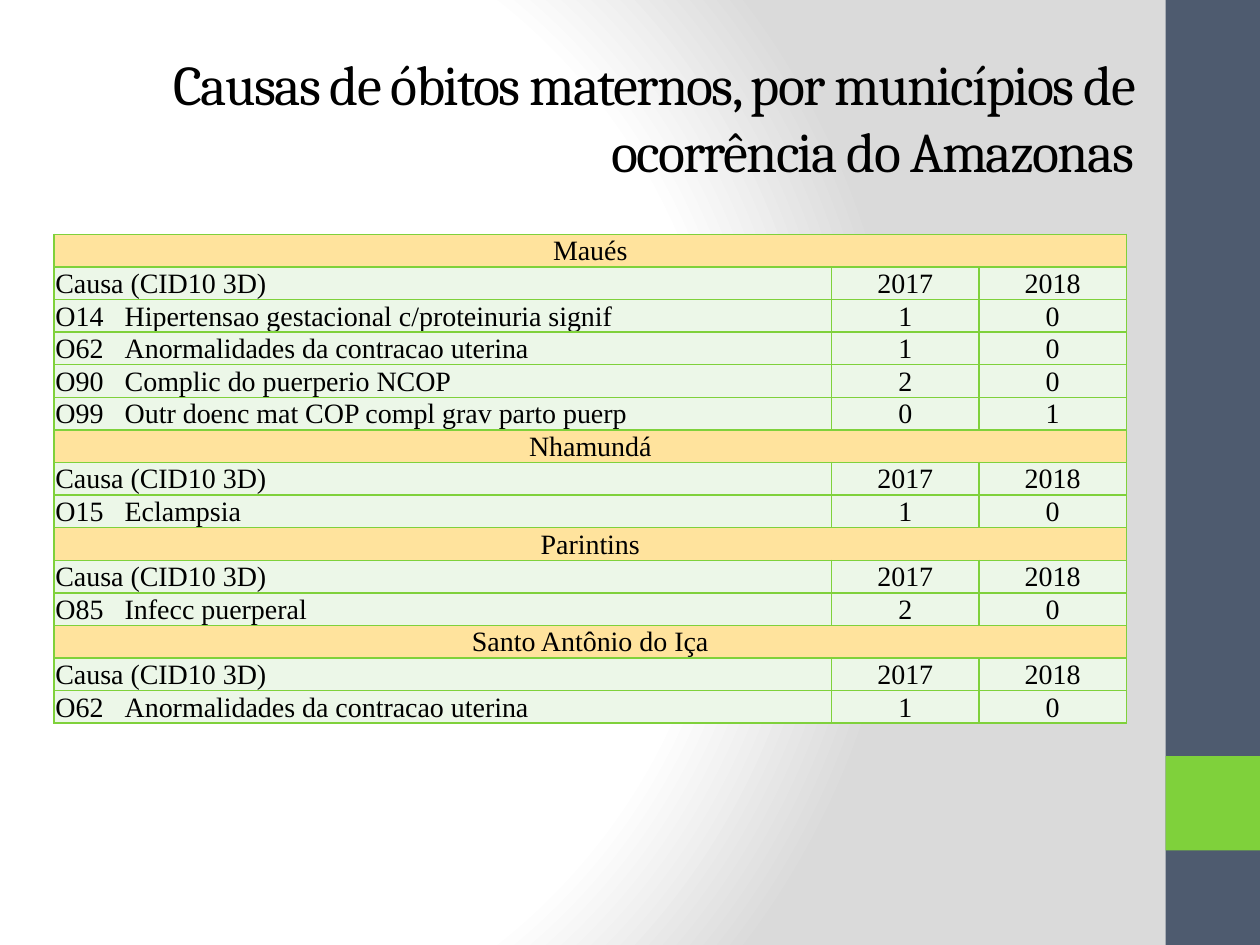
from dataclasses import dataclass

from lxml import etree
from pptx import Presentation, util as u
from pptx.dml.color import RGBColor
from pptx.enum import shapes, text
from pptx.oxml import parse_xml
from pptx.oxml.ns import nsdecls, qn


@dataclass(frozen=True)
class Theme:
    ink: str = "000000"
    slate: str = "4E5B6F"
    green: str = "7FD13B"
    heading: str = "FFE39D"
    body: str = "ECF7E8"
    white: str = "FFFFFF"
    grey: str = "DADADA"
    title_font: str = "Cambria"
    table_font: str = "Times New Roman"
    title_size: int = 32
    table_size: int = 16


THEME = Theme()
TITLE = "Causas de óbitos maternos, por municípios de ocorrência do Amazonas"
HEADER = ("Causa (CID10 3D)", "2017", "2018")
TOWNS = {
    "Maués": [
        ("O14", "Hipertensao gestacional c/proteinuria signif", 1, 0),
        ("O62", "Anormalidades da contracao uterina", 1, 0),
        ("O90", "Complic do puerperio NCOP", 2, 0),
        ("O99", "Outr doenc mat COP compl grav parto puerp", 0, 1),
    ],
    "Nhamundá": [("O15", "Eclampsia", 1, 0)],
    "Parintins": [("O85", "Infecc puerperal", 2, 0)],
    "Santo Antônio do Iça": [("O62", "Anormalidades da contracao uterina", 1, 0)],
}
COLUMNS = (6.17, 1.17, 1.17)
TABLE_LEFT, TABLE_TOP, TABLE_HEIGHT = 0.43, 1.86, 3.88
CODE_WIDTH = 0.55
WIDTH, HEIGHT = 10, 7.5
BAR = 0.75


def inches(*values):
    return [u.Inches(value) for value in values]


def add_span(para, words, font, size):
    span = para.add_run()
    span.text = words
    span.font.name = font
    span.font.size = u.Pt(size)
    span.font.color.rgb = RGBColor.from_string(THEME.ink)
    return span


def paint_background(page):
    page.background.fill.solid()
    holder = page.element.find(".//" + qn("p:bgPr"))
    stops = ((0, THEME.white), (75, THEME.white), (100, THEME.grey))
    marks = "".join(
        f'<a:gs pos="{place * 1000}"><a:srgbClr val="{color}"/></a:gs>'
        for place, color in stops
    )
    gradient = parse_xml(
        f'<a:gradFill {nsdecls("a")} rotWithShape="1"><a:gsLst>{marks}</a:gsLst>'
        '<a:path path="circle"><a:fillToRect l="20000" t="50000" r="100000" b="50000"/>'
        "</a:path></a:gradFill>"
    )
    holder.replace(holder.find(qn("a:solidFill")), gradient)


def add_block(page, top, height, color):
    block = page.shapes.add_shape(
        shapes.MSO_SHAPE.RECTANGLE, *inches(WIDTH - BAR, top, BAR, height)
    )
    block.shadow.inherit = False
    block.fill.solid()
    block.fill.fore_color.rgb = RGBColor.from_string(color)
    block.line.fill.background()


def add_title(page):
    box = page.shapes.title
    box.left, box.top, box.width, box.height = inches(-0.28, 0.3, 9.38, 1.25)
    frame = box.text_frame
    frame.word_wrap = True
    frame.auto_size = text.MSO_AUTO_SIZE.NONE
    frame.vertical_anchor = text.MSO_ANCHOR.MIDDLE
    para = frame.paragraphs[0]
    para.alignment = text.PP_ALIGN.RIGHT
    span = add_span(para, TITLE, THEME.title_font, THEME.title_size)
    span.font._element.set("spc", "-100")


def add_borders(cell):
    properties = cell._tc.get_or_add_tcPr()
    for side in ("lnL", "lnR", "lnT", "lnB"):
        line = etree.SubElement(properties, qn(f"a:{side}"), w=str(u.Pt(1)))
        fill = etree.SubElement(line, qn("a:solidFill"))
        etree.SubElement(fill, qn("a:srgbClr"), val=THEME.green)


def add_code_tab(para):
    tabs = etree.SubElement(para._p.get_or_add_pPr(), qn("a:tabLst"))
    etree.SubElement(tabs, qn("a:tab"), pos=str(u.Inches(CODE_WIDTH)), algn="l")


def fill_cell(cell, words, color, centered):
    add_borders(cell)
    cell.fill.solid()
    cell.fill.fore_color.rgb = RGBColor.from_string(color)
    cell.margin_left = cell.margin_right = cell.margin_top = u.Inches(0.01)
    cell.margin_bottom = 0
    cell.vertical_anchor = text.MSO_ANCHOR.BOTTOM
    para = cell.text_frame.paragraphs[0]
    para.alignment = text.PP_ALIGN.CENTER if centered else text.PP_ALIGN.LEFT
    if "\t" in words:
        add_code_tab(para)
    if words:
        add_span(para, words, THEME.table_font, THEME.table_size)


def table_rows():
    for town, causes in TOWNS.items():
        yield (town, "", ""), True
        yield HEADER, False
        for code, cause, *counts in causes:
            yield (f"{code}\t{cause}", *map(str, counts)), False


def add_death_table(page):
    rows = list(table_rows())
    table = page.shapes.add_table(
        len(rows), len(COLUMNS),
        *inches(TABLE_LEFT, TABLE_TOP, sum(COLUMNS), TABLE_HEIGHT)
    ).table
    table.first_row = table.horz_banding = False
    for column, width in zip(table.columns, COLUMNS):
        column.width = u.Inches(width)
    for index, (values, is_town) in enumerate(rows):
        table.rows[index].height = u.Inches(TABLE_HEIGHT / len(rows))
        color = THEME.heading if is_town else THEME.body
        for column, words in enumerate(values):
            fill_cell(table.cell(index, column), words, color, is_town or column > 0)
        if is_town:
            table.cell(index, 0).merge(table.cell(index, len(COLUMNS) - 1))


def main():
    deck = Presentation()
    deck.slide_width, deck.slide_height = inches(WIDTH, HEIGHT)
    page = deck.slides.add_slide(deck.slide_layouts[5])
    paint_background(page)
    add_block(page, 0, HEIGHT, THEME.slate)
    add_block(page, HEIGHT - 2 * BAR, BAR, THEME.green)
    add_title(page)
    add_death_table(page)
    deck.save("out.pptx")


if __name__ == "__main__":
    main()
